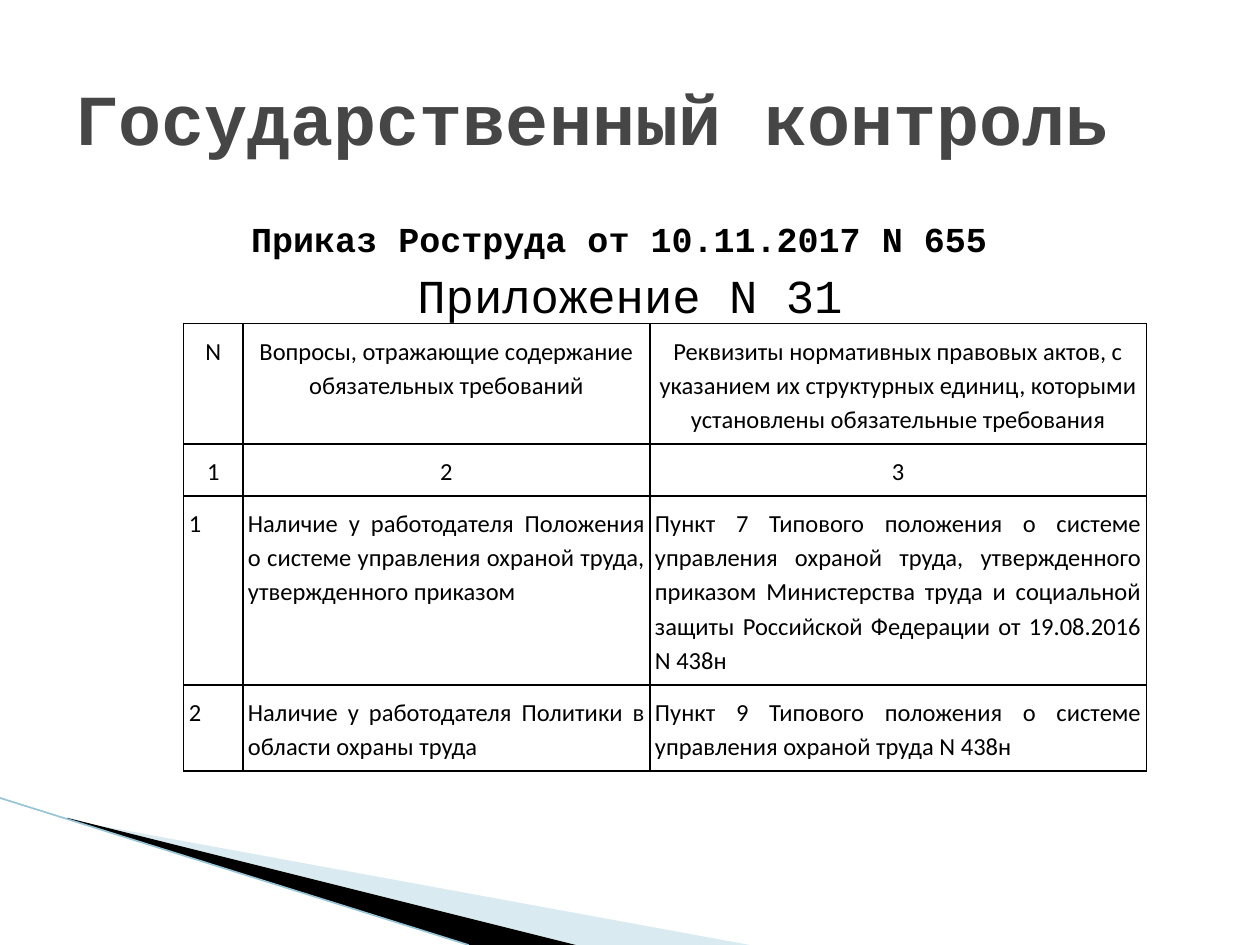
from dataclasses import dataclass

from lxml.etree import SubElement
from pptx import Presentation
from pptx.dml.color import RGBColor
from pptx.enum.shapes import MSO_CONNECTOR as Connector
from pptx.enum.text import MSO_ANCHOR as Anchor, MSO_AUTO_SIZE as AutoSize, PP_ALIGN as Align
from pptx.oxml.ns import qn
from pptx.util import Pt


@dataclass(frozen=True)
class Theme:
    heading_font: str = "Courier New"
    table_font: str = "Calibri"
    ink: str = "000000"
    title_color: str = "464646"
    pale_wedge: str = "A0CBDC"
    edge: str = "97C5D8"
    title_size: float = 41
    order_size: float = 20
    annex_size: float = 27
    table_size: float = 14


@dataclass(frozen=True)
class Wedge:
    points: tuple
    color: str
    opacity: int = 100


THEME = Theme()

WEDGES = (
    Wedge(((39.6, 468.7), (428.4, 540), (328.3, 540), (39.6, 468)), THEME.pale_wedge, 40),
    Wedge(((38.2, 467.3), (329, 540), (267.8, 540), (38.9, 468)), THEME.ink),
)

COLUMN_WIDTHS = (33.84, 232.56, 283.68)
ROW_HEIGHTS = (68, 29, 107, 49)
ROWS = (
    ("N",
     "Вопросы, отражающие содержание обязательных требований",
     "Реквизиты нормативных правовых актов, с указанием их структурных единиц, "
     "которыми установлены обязательные требования"),
    ("1", "2", "3"),
    ("1",
     "Наличие у работодателя Положения о системе управления охраной труда, "
     "утвержденного приказом",
     "Пункт 7 Типового положения о системе управления охраной труда, утвержденного "
     "приказом Министерства труда и социальной защиты Российской Федерации "
     "от 19.08.2016 N 438н "),
    ("2",
     "Наличие у работодателя Политики в области охраны труда",
     "Пункт 9 Типового положения о системе управления охраной труда N 438н"),
)
HEADER_ROWS = 2


def write(paragraph, text: str, *, size: float, font: str = THEME.heading_font,
          color: str = THEME.ink, bold: bool = False, align=Align.LEFT,
          before: float = 0, spacing: float = 1.0) -> None:
    """Fill one paragraph with text in the given format."""
    paragraph.alignment = align
    paragraph.space_before = Pt(before)
    paragraph.line_spacing = spacing
    run = paragraph.add_run()
    run.text = text
    run.font.name = font
    run.font.size = Pt(size)
    run.font.bold = bold
    run.font.color.rgb = RGBColor.from_string(color)


def remove_bullet(paragraph) -> None:
    properties = paragraph._p.get_or_add_pPr()
    properties.set("marL", "0")
    properties.set("indent", "0")
    SubElement(properties, qn("a:buNone"))


def place(shape, left: float, top: float, width: float, height: float) -> None:
    shape.left, shape.top = Pt(left), Pt(top)
    shape.width, shape.height = Pt(width), Pt(height)


def draw_wedge(slide, wedge: Wedge) -> None:
    start, *others = [(Pt(x), Pt(y)) for x, y in wedge.points]
    builder = slide.shapes.build_freeform(*start, scale=1.0)
    builder.add_line_segments(others, close=True)
    shape = builder.convert_to_shape()
    shape.shadow.inherit = False
    shape.line.fill.background()
    shape.fill.solid()
    shape.fill.fore_color.rgb = RGBColor.from_string(wedge.color)
    if wedge.opacity < 100:
        color = shape.fill._xPr.find(qn("a:solidFill"))[0]
        SubElement(color, qn("a:alpha"), val=str(wedge.opacity * 1000))


def draw_edge(slide) -> None:
    edge = slide.shapes.add_connector(Connector.STRAIGHT, Pt(0), Pt(456), Pt(267.8), Pt(540))
    edge.line.color.rgb = RGBColor.from_string(THEME.edge)
    edge.line.width = Pt(0.95)
    SubElement(edge._element.spPr, qn("a:effectLst"))


def border_cell(cell) -> None:
    properties = cell._tc.get_or_add_tcPr()
    for position, side in enumerate(("lnL", "lnR", "lnT", "lnB")):
        line = SubElement(properties, qn(f"a:{side}"), w=str(Pt(1)))
        SubElement(SubElement(line, qn("a:solidFill")), qn("a:srgbClr"), val=THEME.ink)
        properties.remove(line)
        properties.insert(position, line)  # borders come before the fill


def draw_requirements(slide) -> None:
    table = slide.shapes.add_table(
        len(ROWS), len(COLUMN_WIDTHS), Pt(105), Pt(185),
        Pt(sum(COLUMN_WIDTHS)), Pt(sum(ROW_HEIGHTS))).table
    table.first_row = table.horz_banding = False
    for column, width in zip(table.columns, COLUMN_WIDTHS):
        column.width = Pt(width)
    for row, height in zip(table.rows, ROW_HEIGHTS):
        row.height = Pt(height)
    for r, texts in enumerate(ROWS):
        for c, text in enumerate(texts):
            cell = table.cell(r, c)
            cell.fill.background()
            cell.margin_left = cell.margin_right = Pt(2.9)
            cell.margin_top = cell.margin_bottom = Pt(5)
            border_cell(cell)
            if r < HEADER_ROWS:
                align = Align.CENTER
            else:
                align = Align.LEFT if c == 0 else Align.JUSTIFY
            write(cell.text_frame.paragraphs[0], text, size=THEME.table_size,
                  font=THEME.table_font, align=align, spacing=1.15)


def main() -> None:
    deck = Presentation()
    deck.slide_width, deck.slide_height = Pt(720), Pt(540)
    slide = deck.slides.add_slide(deck.slide_layouts[1])
    title, body = slide.placeholders

    # Corner decoration
    for wedge in WEDGES:
        draw_wedge(slide, wedge)
    draw_edge(slide)

    # Order and annex lines, in front of the decoration
    slide.shapes._spTree.append(body._element)
    place(body, 36, 116.6, 648, 356.4)
    order_frame = body.text_frame
    order_frame.auto_size = AutoSize.NONE
    order_frame.margin_top = Pt(7.6)
    order, annex = order_frame.paragraphs[0], order_frame.add_paragraph()
    for paragraph in (order, annex):
        remove_bullet(paragraph)
    write(order, "Приказ Роструда от 10.11.2017 N 655 ", size=THEME.order_size,
          bold=True, align=Align.CENTER)
    write(annex, "Приложение N 31", size=THEME.annex_size, align=Align.CENTER, before=4)

    # Title
    slide.shapes._spTree.append(title._element)
    place(title, 36, 21.6, 648, 90)
    title.text_frame.auto_size = AutoSize.NONE
    title.text_frame.vertical_anchor = Anchor.MIDDLE
    write(title.text_frame.paragraphs[0], "Государственный контроль",
          size=THEME.title_size, color=THEME.title_color, bold=True)

    # Requirements table
    draw_requirements(slide)

    deck.save("out.pptx")


if __name__ == "__main__":
    main()
